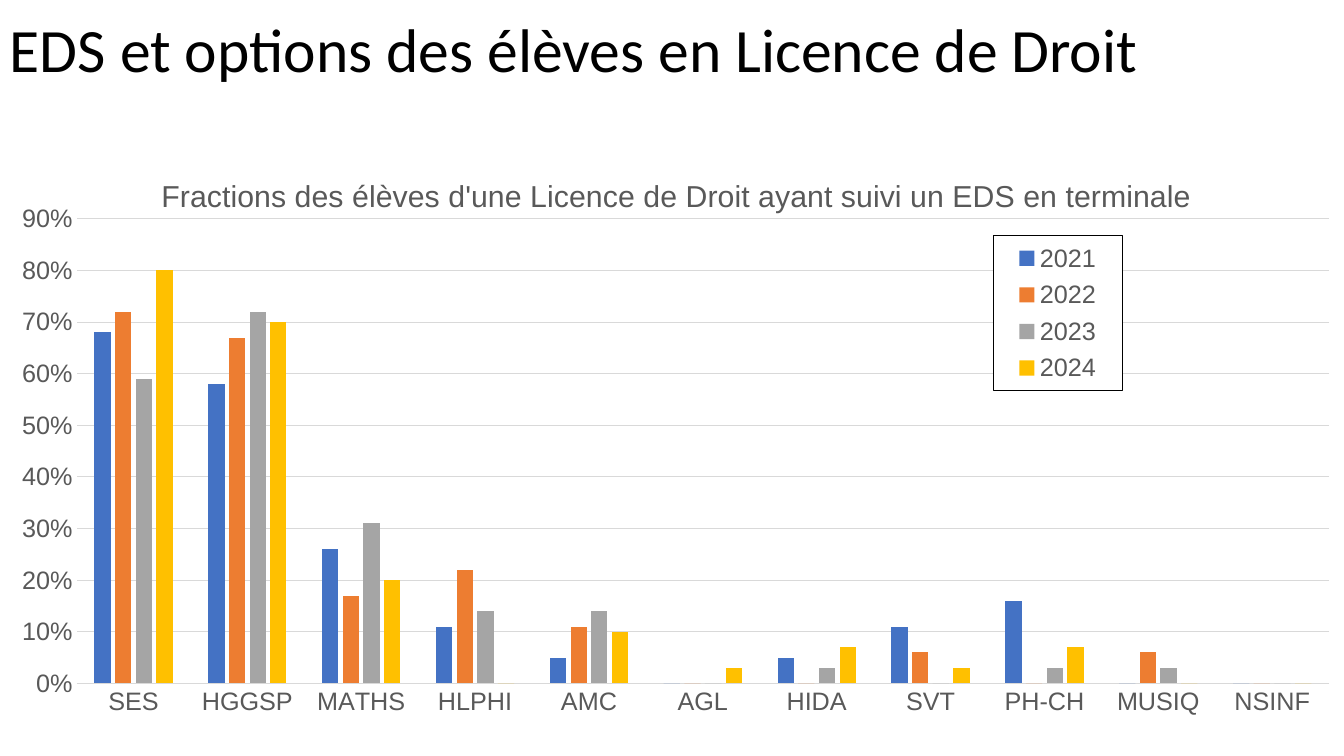
from dataclasses import dataclass

from lxml import etree
from pptx import Presentation
from pptx.chart.data import CategoryChartData
from pptx.dml.color import RGBColor
from pptx.enum.chart import XL_CHART_TYPE, XL_LEGEND_POSITION, XL_TICK_MARK
from pptx.enum.text import MSO_ANCHOR
from pptx.oxml import parse_xml
from pptx.oxml.ns import nsdecls, qn
from pptx.util import Pt

COLUMNS = XL_CHART_TYPE.COLUMN_CLUSTERED
LEGEND_BOTTOM = XL_LEGEND_POSITION.BOTTOM
NO_TICK = XL_TICK_MARK.NONE
MIDDLE = MSO_ANCHOR.MIDDLE

SLIDE_W, SLIDE_H = 1344, 756
EMU_PER_PX = 12192000 / SLIDE_W

SUBJECTS = ["SES", "HGGSP", "MATHS", "HLPHI", "AMC", "AGL", "HIDA", "SVT",
            "PH-CH", "MUSIQ", "NSINF"]
SHARES = {
    "2021": [0.68, 0.58, 0.26, 0.11, 0.05, 0, 0.05, 0.11, 0.16, 0, 0],
    "2022": [0.72, 0.67, 0.17, 0.22, 0.11, 0, 0, 0.06, 0, 0.06, 0],
    "2023": [0.59, 0.72, 0.31, 0.14, 0.14, 0, 0.03, 0, 0.03, 0.03, 0],
    "2024": [0.8, 0.7, 0.2, 0, 0.1, 0.03, 0.07, 0.03, 0.07, 0, 0],
}


@dataclass(frozen=True)
class Theme:
    heading_font: str = "Calibri"
    chart_font: str = "Arial"
    heading_size: float = 44
    chart_title_size: float = 21.6
    label_size: float = 18
    ink: str = "000000"
    label: str = "595959"
    grid: str = "D9D9D9"
    paper: str = "FFFFFF"
    years: tuple = ("4472C4", "ED7D31", "A5A5A5", "FFC000")


def px(length):
    return round(length * EMU_PER_PX)


def place(part, index, **fractions):
    """Give a chart part a manual layout, in fractions of the chart."""
    for old in part.findall(qn("c:layout")):
        part.remove(old)
    layout = parse_xml(f"<c:layout {nsdecls('c')}><c:manualLayout/></c:layout>")
    for tag, value in fractions.items():
        etree.SubElement(layout[0], qn(f"c:{tag}")).set("val", str(value))
    part.insert(index, layout)


class SlideBuilder:
    def __init__(self, slide, theme):
        self.slide = slide
        self.theme = theme

    def style(self, font, name, size, color):
        font.name = name
        font.size = Pt(size)
        font.bold = False
        font.color.rgb = RGBColor.from_string(color)

    def style_label(self, font):
        self.style(font, self.theme.chart_font, self.theme.label_size, self.theme.label)

    def style_line(self, line):
        line.color.rgb = RGBColor.from_string(self.theme.grid)
        line.width = Pt(0.75)

    def heading(self, text, left, top, width, height):
        frame = self.slide.shapes.add_textbox(
            px(left), px(top), px(width), px(height)).text_frame
        frame.word_wrap = True
        frame.vertical_anchor = MIDDLE
        paragraph = frame.paragraphs[0]
        paragraph.line_spacing = 0.9
        run = paragraph.add_run()
        run.text = text
        self.style(run.font, self.theme.heading_font, self.theme.heading_size,
                   self.theme.ink)

    def column_chart(self, title, categories, series, left, top, width, height):
        data = CategoryChartData(number_format="0%")
        data.categories = categories
        for name, values in series.items():
            data.add_series(name, values)
        chart = self.slide.shapes.add_chart(
            COLUMNS, px(left), px(top), px(width), px(height), data).chart
        self.style(chart.font, self.theme.chart_font, self.theme.label_size,
                   self.theme.ink)

        plot = chart.plots[0]
        plot.gap_width, plot.overlap = 219, -27
        plot.vary_by_categories = False
        for year, color in zip(plot.series, self.theme.years):
            year.format.fill.solid()
            year.format.fill.fore_color.rgb = RGBColor.from_string(color)
        place(chart.plots[0]._element.getparent(), 0, layoutTarget="inner",
              xMode="edge", yMode="edge", x=0.057, y=0.118, w=0.932, h=0.763)

        self.axes(chart)
        self.chart_title(chart, title)
        self.legend(chart)

    def axes(self, chart):
        for axis in (chart.category_axis, chart.value_axis):
            axis.major_tick_mark = axis.minor_tick_mark = NO_TICK
            self.style_label(axis.tick_labels.font)
        self.style_line(chart.category_axis.format.line)

        shares = chart.value_axis
        shares.minimum_scale, shares.maximum_scale, shares.major_unit = 0, 0.9, 0.1
        shares.tick_labels.number_format = "0%"
        shares.tick_labels.number_format_is_linked = False
        shares.format.line.fill.background()
        self.style_line(shares.major_gridlines.format.line)

    def chart_title(self, chart, text):
        chart.has_title = True
        run = chart.chart_title.text_frame.paragraphs[0].add_run()
        run.text = text
        self.style(run.font, self.theme.chart_font, self.theme.chart_title_size,
                   self.theme.label)
        place(chart.chart_title._element, 1, xMode="edge", yMode="edge",
              x=0.116, y=0.04)

    def legend(self, chart):
        chart.has_legend = True
        legend = chart.legend
        legend.position = LEGEND_BOTTOM
        legend.include_in_layout = False
        place(legend._element, 1, xMode="edge", yMode="edge",
              x=0.739, y=0.146, w=0.096, h=0.254)
        legend._element.append(parse_xml(
            f"<c:spPr {nsdecls('c', 'a')}>"
            f'<a:solidFill><a:srgbClr val="{self.theme.paper}"/></a:solidFill>'
            f'<a:ln w="{Pt(0.75)}"><a:solidFill><a:srgbClr val="{self.theme.ink}"/>'
            "</a:solidFill></a:ln></c:spPr>"))
        self.style_label(legend.font)


def main():
    deck = Presentation()
    deck.slide_width, deck.slide_height = px(SLIDE_W), px(SLIDE_H)
    builder = SlideBuilder(deck.slides.add_slide(deck.slide_layouts[6]), Theme())
    builder.heading("EDS et options des élèves en Licence de Droit", 0, 0, 1159, 105)
    builder.column_chart(
        "Fractions des élèves d'une Licence de Droit ayant suivi un EDS en terminale",
        SUBJECTS, SHARES, 0, 147, SLIDE_W, 609)
    deck.save("out.pptx")


if __name__ == "__main__":
    main()
